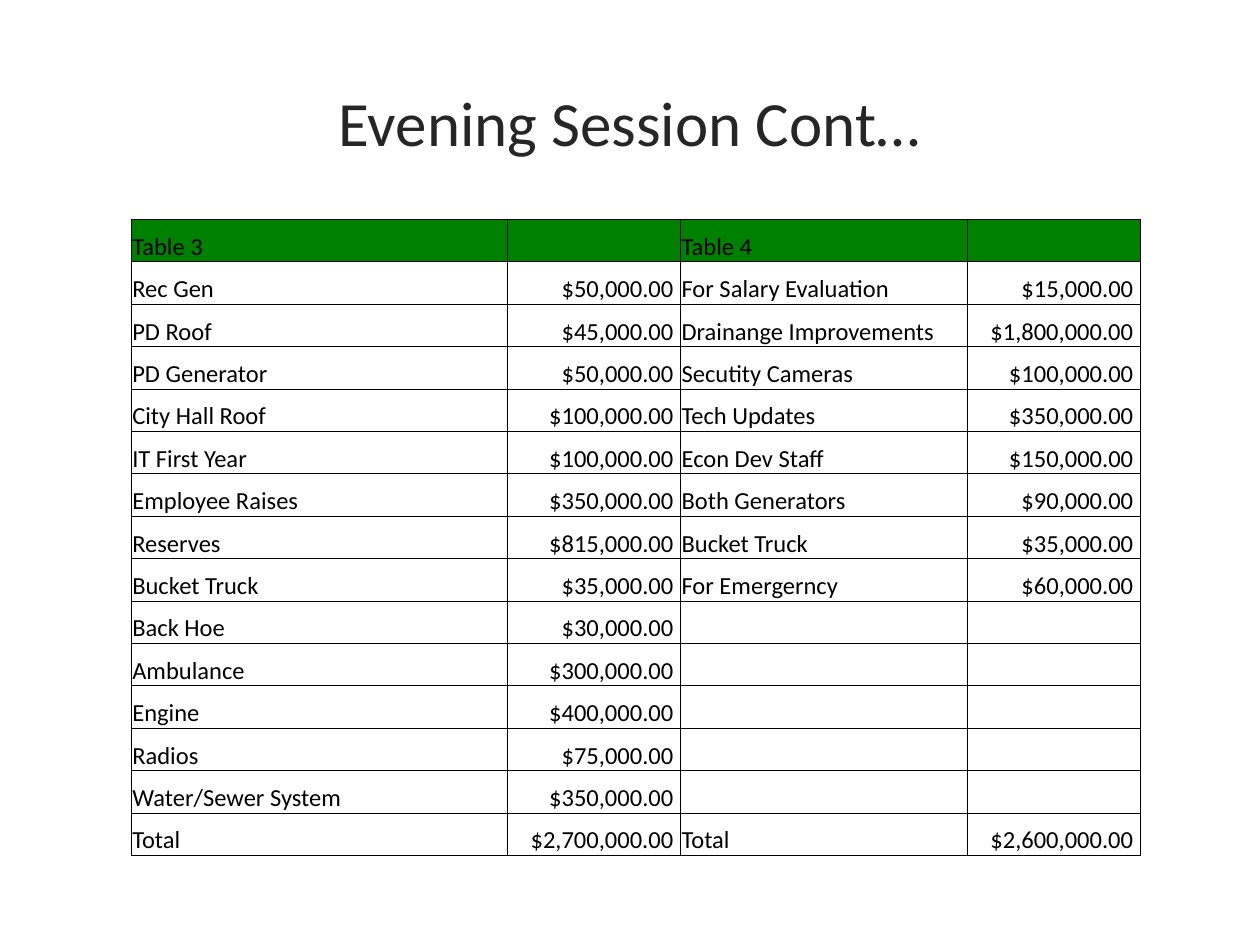
from itertools import zip_longest
from lxml.etree import SubElement
from pptx import Presentation
from pptx.dml.color import RGBColor
from pptx.enum.text import MSO_ANCHOR, PP_ALIGN
from pptx.oxml.ns import qn
from pptx.util import Inches, Pt

WIDE, HIGH = 10, 7.5
FONT = "Calibri"
INK, BLACK, GREEN = "262626", "000000", "008000"
SHARES = (2.99, 1.37, 2.28, 1.37)
LEFT = [
    ("Rec Gen", 50000), ("PD Roof", 45000), ("PD Generator", 50000),
    ("City Hall Roof", 100000), ("IT First Year", 100000),
    ("Employee Raises", 350000), ("Reserves", 815000),
    ("Bucket Truck", 35000), ("Back Hoe", 30000), ("Ambulance", 300000),
    ("Engine", 400000), ("Radios", 75000), ("Water/Sewer System", 350000),
]
RIGHT = [
    ("For Salary Evaluation", 15000), ("Drainange Improvements", 1800000),
    ("Secutity Cameras", 100000), ("Tech Updates", 350000),
    ("Econ Dev Staff", 150000), ("Both Generators", 90000),
    ("Bucket Truck", 35000), ("For Emergerncy", 60000),
]
TOTALS = ("Total", 2700000, "Total", 2600000)


def color(code):
    """Turn a hex string into a colour."""
    return RGBColor.from_string(code)


def write(para, text, size, code, align):
    """Add one styled run to a paragraph."""
    para.alignment = align
    run = para.add_run()
    run.text = text
    run.font.name, run.font.size = FONT, Pt(size)
    run.font.color.rgb = color(code)


def frame(cell):
    """Draw thin black lines round a cell."""
    props = cell._tc.get_or_add_tcPr()
    for side in ("a:lnL", "a:lnR", "a:lnT", "a:lnB"):
        line = SubElement(props, qn(side), w=str(Pt(0.5)))
        fill = SubElement(line, qn("a:solidFill"))
        SubElement(fill, qn("a:srgbClr"), val=BLACK)


def fill_cell(cell, value, head):
    """Format one cell and write its label or amount."""
    cell.margin_left = cell.margin_right = cell.margin_top = Inches(0.01)
    cell.margin_bottom = 0
    cell.vertical_anchor = MSO_ANCHOR.BOTTOM
    frame(cell)
    if head:
        cell.fill.solid()
        cell.fill.fore_color.rgb = color(GREEN)
    else:
        cell.fill.background()
    if value is None:
        return
    money = isinstance(value, int)
    text = f" ${value:,.2f} " if money else value
    align = PP_ALIGN.RIGHT if money else PP_ALIGN.LEFT
    write(cell.text_frame.paragraphs[0], text, 14, BLACK, align)


def add_title(slide, box, text):
    """Place and format the title in its box."""
    title = slide.shapes.title
    title.left, title.top, title.width, title.height = map(Inches, box)
    title.text_frame.vertical_anchor = MSO_ANCHOR.MIDDLE
    write(title.text_frame.paragraphs[0], text, 36, INK, PP_ALIGN.CENTER)


def add_budget(slide, box, rows):
    """Build the budget table in its box."""
    x, y, w, h = box
    shape = slide.shapes.add_table(len(rows), len(SHARES), *map(Inches, box))
    table = shape.table
    table.first_row = table.horz_banding = False
    for col, share in zip(table.columns, SHARES):
        col.width = Inches(w * share / sum(SHARES))
    for row in table.rows:
        row.height = Inches(h / len(rows))
    for r, values in enumerate(rows):
        for c, value in enumerate(values):
            fill_cell(table.cell(r, c), value, r == 0)


def main():
    """Build and save the slide."""
    deck = Presentation()
    deck.slide_width, deck.slide_height = Inches(WIDE), Inches(HIGH)
    slide = deck.slides.add_slide(deck.slide_layouts[5])
    add_title(slide, (0.79, 0.34, 8.41, 1.25), "Evening Session Cont…")
    pairs = zip_longest(LEFT, RIGHT, fillvalue=(None, None))
    rows = [("Table 3", None, "Table 4", None)]
    rows += [a + b for a, b in pairs]
    rows.append(TOTALS)
    add_budget(slide, (1.04, 1.74, 8.01, 5.05), rows)
    deck.save("out.pptx")


if __name__ == "__main__":
    main()
